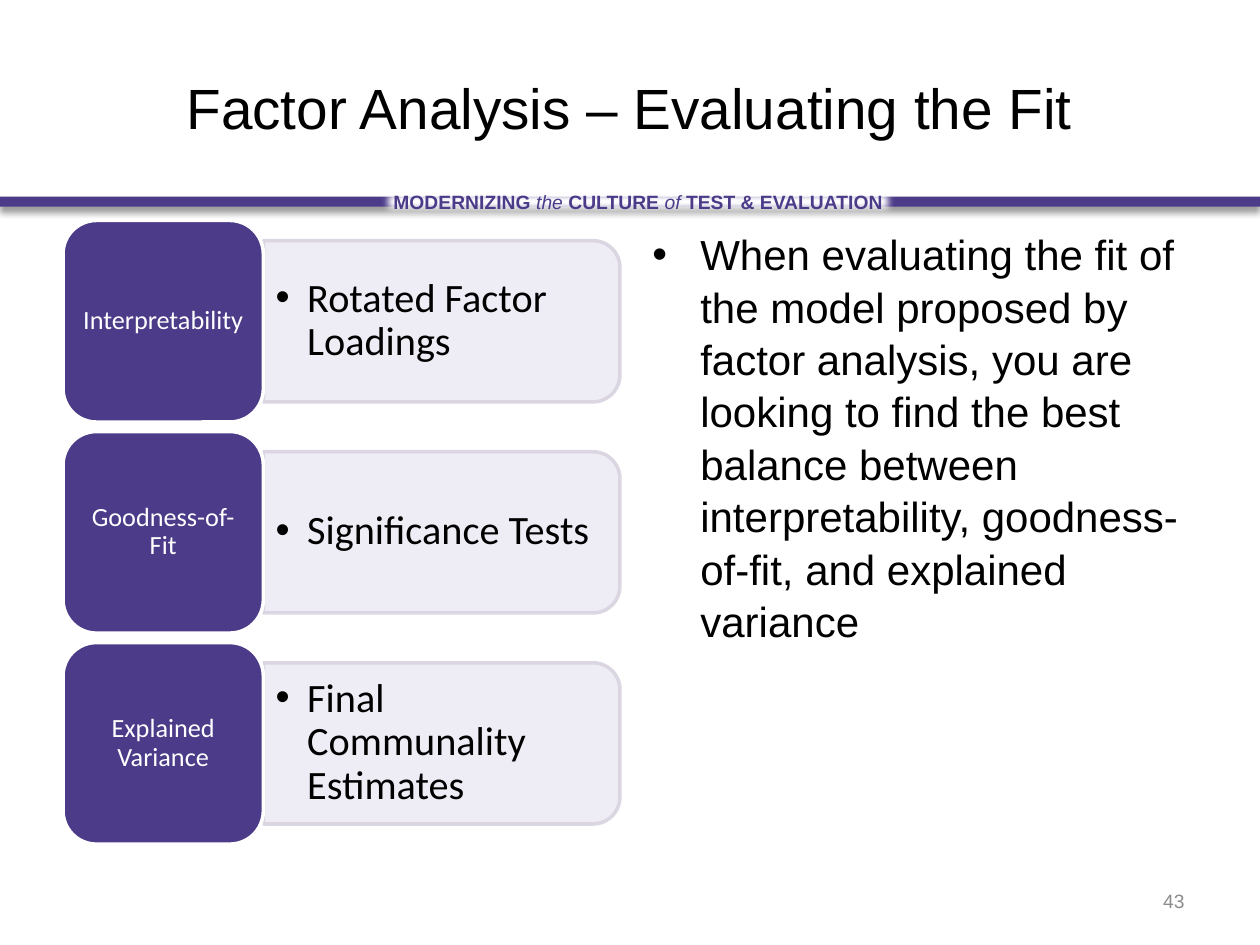
from dataclasses import dataclass

from lxml.etree import SubElement
from pptx import Presentation
from pptx.dml.color import RGBColor
from pptx.enum.shapes import MSO_SHAPE
from pptx.enum.text import MSO_ANCHOR, PP_ALIGN
from pptx.oxml.ns import qn
from pptx.util import Inches, Pt


@dataclass(frozen=True)
class Theme:
    purple: str = "4C3B89"
    lavender: str = "EDEBF3"
    edge: str = "D8D3E0"
    white: str = "FFFFFF"
    black: str = "000000"
    gray: str = "8C8C8C"
    sans: str = "Arial"
    diagram: str = "Calibri"
    title: float = 32.4
    body: float = 24
    detail: float = 23
    tile: float = 15
    small: float = 11


THEME = Theme()
WIDTH, HEIGHT = 10, 7.5
MARGIN = WIDTH * 0.05
ROWS_TOP = 1.75
ROW_PITCH = 1.675
TILE_WIDTH, TILE_HEIGHT = 1.59, 1.6
PANEL_LEFT = MARGIN + TILE_WIDTH
PANEL_LENGTH, PANEL_DEPTH = 2.83, 1.28

ROWS = [
    ("Interpretability", "Rotated Factor Loadings"),
    ("Goodness-of-Fit", "Significance Tests"),
    ("Explained Variance", "Final Communality Estimates"),
]


def set_frame(shape, insets=(0.1, 0.05), anchor=MSO_ANCHOR.MIDDLE, wrap=True):
    frame = shape.text_frame
    frame.word_wrap = wrap
    frame.vertical_anchor = anchor
    frame.margin_left = frame.margin_right = Inches(insets[0])
    frame.margin_top = frame.margin_bottom = Inches(insets[1])
    return frame.paragraphs[0]


def set_font(paragraph, size, color, name=THEME.sans):
    paragraph.font.size = Pt(size)
    paragraph.font.name = name
    paragraph.font.color.rgb = RGBColor.from_string(color)


def add_bullet(paragraph, indent):
    properties = paragraph._p.get_or_add_pPr()
    properties.set("marL", str(Inches(indent)))
    properties.set("indent", str(-Inches(indent)))
    SubElement(properties, qn("a:buFont"), typeface=THEME.sans)
    SubElement(properties, qn("a:buChar"), char="•")


def add_text(slide, box, text, size, color=THEME.black, name=THEME.sans,
             align=PP_ALIGN.LEFT, anchor=MSO_ANCHOR.MIDDLE, indent=None, spacing=None):
    holder = slide.shapes.add_textbox(*map(Inches, box))
    paragraph = set_frame(holder, anchor=anchor)
    paragraph.text = text
    paragraph.alignment = align
    paragraph.line_spacing = spacing
    if indent:
        add_bullet(paragraph, indent)
    set_font(paragraph, size, color, name)


def add_block(slide, preset, box, fill, edge=None):
    block = slide.shapes.add_shape(preset, *map(Inches, box))
    block.shadow.inherit = False
    block.fill.solid()
    block.fill.fore_color.rgb = RGBColor.from_string(fill)
    if edge:
        block.line.color.rgb = RGBColor.from_string(edge)
        block.line.width = Pt(2)
    else:
        block.line.fill.background()
    return block


def add_effect(block, kind, **settings):
    effects = block._element.spPr.find(qn("a:effectLst"))
    return SubElement(effects, qn(kind), {key: str(value) for key, value in settings.items()})


def set_alpha(color_format_parent, percent):
    color = color_format_parent.find(".//" + qn("a:srgbClr"))
    SubElement(color, qn("a:alpha"), val=str(percent * 1000))


def add_banner(slide):
    bar = add_block(slide, MSO_SHAPE.RECTANGLE, (0, 1.56, WIDTH, 0.08), THEME.purple)
    shadow = add_effect(bar, "a:outerShdw", blurRad=Pt(4), dist=Pt(3),
                        dir=90 * 60000, algn="t", rotWithShape=0)
    SubElement(shadow, qn("a:srgbClr"), val=THEME.black)
    set_alpha(shadow, 40)

    motto = add_block(slide, MSO_SHAPE.RECTANGLE, (3, 1.46, 4.13, 0.28), THEME.white)
    add_effect(motto, "a:softEdge", rad=Pt(5))
    paragraph = set_frame(motto, (0.09, 0.05), wrap=False)
    paragraph.alignment = PP_ALIGN.CENTER
    set_font(paragraph, THEME.small, THEME.purple)
    for index, words in enumerate(
            ("MODERNIZING ", "the", " CULTURE ", "of", " TEST & EVALUATION")):
        run = paragraph.add_run()
        run.text = words
        run.font.bold = index % 2 == 0
        run.font.italic = index % 2 == 1


def add_row(slide, index, criterion, measure):
    top = ROWS_TOP + index * ROW_PITCH
    middle = top + TILE_HEIGHT / 2
    center = PANEL_LEFT + PANEL_LENGTH / 2
    panel = add_block(
        slide, MSO_SHAPE.ROUND_2_SAME_RECTANGLE,
        (center - PANEL_DEPTH / 2, middle - PANEL_LENGTH / 2, PANEL_DEPTH, PANEL_LENGTH),
        THEME.lavender, THEME.edge)
    panel.rotation = 90
    properties = panel._element.spPr
    for part in ("a:solidFill", "a:ln"):
        set_alpha(properties.find(qn(part)), 90)
    add_text(slide, (PANEL_LEFT, middle - 0.58, 2.76, 1.15), measure, THEME.detail,
             name=THEME.diagram, indent=0.25, spacing=0.9)

    tile = add_block(slide, MSO_SHAPE.ROUNDED_RECTANGLE,
                     (MARGIN, top, TILE_WIDTH, TILE_HEIGHT), THEME.purple, THEME.white)
    paragraph = set_frame(tile, (0.06, 0.03))
    paragraph.text = criterion
    paragraph.alignment = PP_ALIGN.CENTER
    paragraph.line_spacing = 0.9
    set_font(paragraph, THEME.tile, THEME.white, THEME.diagram)


def main():
    deck = Presentation()
    deck.slide_width, deck.slide_height = Inches(WIDTH), Inches(HEIGHT)
    slide = deck.slides.add_slide(deck.slide_layouts[6])

    add_banner(slide)
    add_text(slide, (1.33, 0.22, 7.33, 1.25), "Factor Analysis – Evaluating the Fit",
             THEME.title, align=PP_ALIGN.CENTER)
    for index, (criterion, measure) in enumerate(ROWS):
        add_row(slide, index, criterion, measure)
    add_text(slide, (5.08, ROWS_TOP, 4.42, 4.95),
             "When evaluating the fit of the model proposed by factor analysis, "
             "you are looking to find the best balance between interpretability, "
             "goodness-of-fit, and explained variance",
             THEME.body, anchor=MSO_ANCHOR.TOP, indent=0.38, spacing=1.04)
    add_text(slide, (7.17, 6.95, 2.33, 0.4), "43", THEME.small, THEME.gray,
             align=PP_ALIGN.RIGHT)
    deck.save("out.pptx")


if __name__ == "__main__":
    main()
